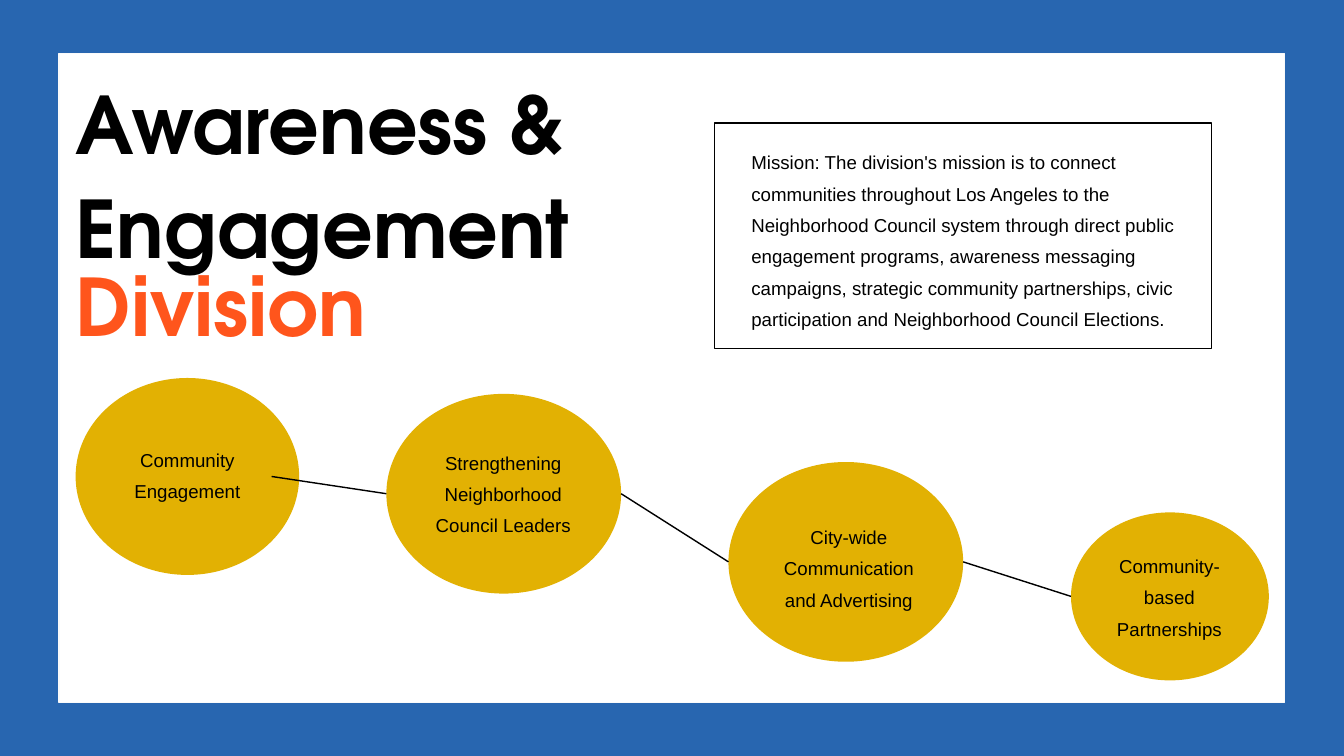
from dataclasses import dataclass
from itertools import pairwise
from typing import NamedTuple

from lxml.etree import SubElement
from pptx import Presentation
from pptx.dml.color import RGBColor
from pptx.enum.shapes import MSO_CONNECTOR, MSO_SHAPE
from pptx.enum.text import MSO_ANCHOR, MSO_AUTO_SIZE, PP_ALIGN
from pptx.oxml.ns import qn
from pptx.util import Pt


@dataclass(frozen=True)
class Theme:
    blue: RGBColor = RGBColor(0x28, 0x66, 0xB0)
    white: RGBColor = RGBColor(0xFF, 0xFF, 0xFF)
    panel_edge: RGBColor = RGBColor(0xFA, 0xFA, 0xFA)
    black: RGBColor = RGBColor(0, 0, 0)
    orange: RGBColor = RGBColor(0xFF, 0x55, 0x1C)
    gold: RGBColor = RGBColor(0xE2, 0xB1, 0x03)
    heading_font: str = "TeX Gyre Adventor"
    body_font: str = "Arial"
    heading_size: float = 85
    body_size: float = 20
    line_width: float = 1.5
    label_inset: float = 20


class Box(NamedTuple):
    x: float
    y: float
    w: float
    h: float


class Goal(NamedTuple):
    text: str
    oval: Box
    label: Box
    overlap: float = 0


THEME = Theme()
PANEL = Box(63, 57.5, 1313.5, 695)
MISSION_FRAME = Box(765.5, 132, 532.5, 241.5)
MISSION_TEXT = Box(805, 152.5, 488, 221)
TITLE = Box(81, 70, 821, 201.5)
SUBTITLE = Box(81, 265, 670, 108.5)
MISSION = (
    "Mission: The division's mission is to connect communities throughout Los Angeles "
    "to the Neighborhood Council system through direct public engagement programs, "
    "awareness messaging campaigns, strategic community partnerships, civic "
    "participation and Neighborhood Council Elections."
)
GOALS = [
    Goal("Community Engagement", Box(81, 405, 239.5, 211), Box(103.5, 414.5, 194.5, 181), 29.5),
    Goal("Strengthening Neighborhood Council Leaders",
         Box(414, 422, 251.5, 214), Box(437, 433.5, 204.5, 182)),
    Goal("City-wide Communication and Advertising",
         Box(780.5, 495, 251.5, 214), Box(804, 507, 211, 194.5)),
    Goal("Community-based Partnerships", Box(1147.5, 549, 212, 180), Box(1167, 558.5, 172, 153.5)),
]


def add_figure(s, kind: MSO_SHAPE, box: Box, fill: RGBColor | None, edge: RGBColor | None):
    sp = s.shapes.add_shape(kind, *map(Pt, box))
    sp.shadow.inherit = False
    if fill is None:
        sp.fill.background()
    else:
        sp.fill.solid()
        sp.fill.fore_color.rgb = fill
    if edge is None:
        sp.line.fill.background()
    else:
        sp.line.color.rgb = edge
        sp.line.width = Pt(THEME.line_width)
    return sp


def write(sp, text: str, color: RGBColor, heading: bool = False, label: bool = False) -> None:
    tf = sp.text_frame
    tf.text = text
    tf.word_wrap = True
    tf.auto_size = MSO_AUTO_SIZE.NONE if label else MSO_AUTO_SIZE.SHAPE_TO_FIT_TEXT
    tf.vertical_anchor = MSO_ANCHOR.MIDDLE if label else MSO_ANCHOR.TOP
    inset = Pt(THEME.label_inset if label else 0)
    tf.margin_left = tf.margin_top = tf.margin_right = tf.margin_bottom = inset
    p = tf.paragraphs[0]
    p.alignment = PP_ALIGN.CENTER if label else PP_ALIGN.LEFT
    p.line_spacing = 1.1 if heading else 1.4
    r = p.runs[0]
    r.font.name = THEME.heading_font if heading else THEME.body_font
    r.font.size = Pt(THEME.heading_size if heading else THEME.body_size)
    r.font.bold = heading
    r.font.color.rgb = color


def add_text(s, box: Box, text: str, color: RGBColor, heading: bool = False,
             label: bool = False) -> None:
    write(s.shapes.add_textbox(*map(Pt, box)), text, color, heading, label)


def add_goal(s, goal: Goal) -> None:
    add_figure(s, MSO_SHAPE.OVAL, goal.oval, THEME.gold, None)
    add_text(s, goal.label, goal.text, THEME.black, label=True)


def add_link(s, start: Goal, end: Goal) -> None:
    a, b = start.oval, end.oval
    ends = (a.x + a.w - start.overlap, a.y + a.h / 2, b.x, b.y + b.h / 2)
    line = s.shapes.add_connector(MSO_CONNECTOR.STRAIGHT, *map(Pt, ends))
    line.line.color.rgb = THEME.black
    line.line.width = Pt(THEME.line_width)
    SubElement(line.element.spPr, qn("a:effectLst"))


def main() -> None:
    """Build the Awareness & Engagement Division slide."""
    prs = Presentation()
    prs.slide_width, prs.slide_height = Pt(1440), Pt(810)
    s = prs.slides.add_slide(prs.slide_layouts[5])
    s.background.fill.solid()
    s.background.fill.fore_color.rgb = THEME.blue

    title = s.shapes.title
    panel = add_figure(s, MSO_SHAPE.RECTANGLE, PANEL, THEME.white, THEME.panel_edge)
    title.element.addprevious(panel.element)
    title.left, title.top, title.width, title.height = map(Pt, TITLE)
    write(title, "Awareness & Engagement", THEME.black, heading=True)
    add_text(s, SUBTITLE, "Division", THEME.orange, heading=True)

    add_figure(s, MSO_SHAPE.RECTANGLE, MISSION_FRAME, None, THEME.black)
    add_text(s, MISSION_TEXT, MISSION, THEME.black)

    for goal in GOALS:
        add_goal(s, goal)
    for start, end in pairwise(GOALS):
        add_link(s, start, end)
    prs.save("out.pptx")


if __name__ == "__main__":
    main()
